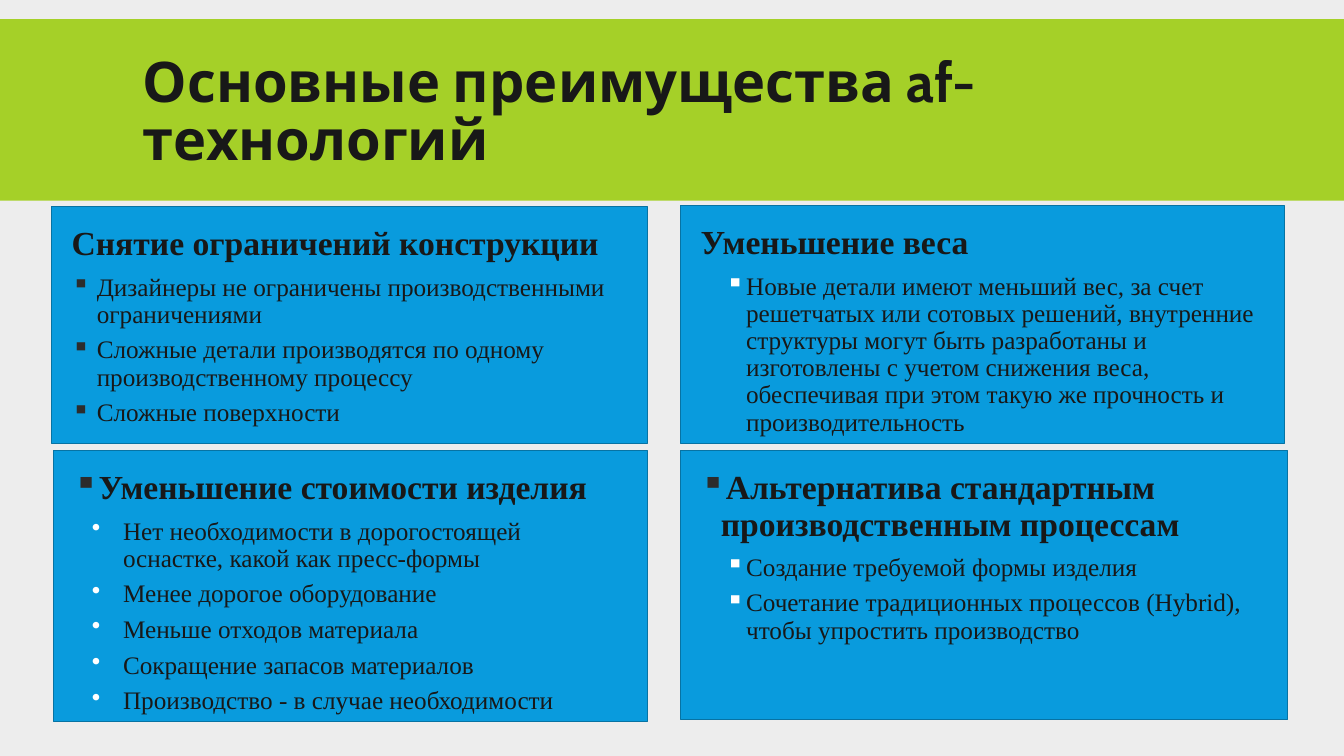
"""Build a slide with four panels on the main advantages of AF technologies."""
from dataclasses import dataclass

import lxml.etree
import pptx
import pptx.dml.color
import pptx.enum.shapes
import pptx.enum.text
import pptx.oxml.ns
import pptx.util

Inches = pptx.util.Inches
Pt = pptx.util.Pt
RGBColor = pptx.dml.color.RGBColor

BACKGROUND = RGBColor(0xED, 0xED, 0xED)
GREEN = RGBColor(0xA5, 0xD0, 0x28)
BLUE = RGBColor(0x09, 0x9B, 0xDD)
BLUE_EDGE = RGBColor(0x07, 0x73, 0xA3)
INK = RGBColor(0x18, 0x18, 0x18)
GREY = RGBColor(0x2C, 0x2C, 0x2C)
WHITE = RGBColor(0xFF, 0xFF, 0xFF)
PANEL_INSET = Inches(0.2)


@dataclass(frozen=True)
class Bullet:
    char: str
    color: RGBColor


@dataclass(frozen=True)
class Panel:
    left: float
    top: float
    width: float
    height: float
    heading: str
    heading_bullet: Bullet | None
    items: tuple[str, ...]
    item_bullet: Bullet
    margin: float
    hanging: float


GREY_SQUARE = Bullet("▪", GREY)
WHITE_SQUARE = Bullet("▪", WHITE)
WHITE_DOT = Bullet("•", WHITE)

PANELS = (
    Panel(0.51, 2.05, 5.91, 2.35, "Снятие ограничений конструкции", None, (
        "Дизайнеры не ограничены производственными ограничениями",
        "Сложные детали производятся по одному производственному процессу",
        "Сложные поверхности",
    ), GREY_SQUARE, 0.25, 0.25),
    Panel(6.75, 2.04, 5.99, 2.36, "Уменьшение веса", None, (
        "Новые детали имеют меньший вес, за счет решетчатых или сотовых решений, "
        "внутренние структуры могут быть разработаны и изготовлены с учетом "
        "снижения веса, обеспечивая при этом такую же прочность и "
        "производительность",
    ), WHITE_SQUARE, 0.45, 0.2),
    Panel(0.53, 4.47, 5.89, 2.69, "Уменьшение стоимости изделия", GREY_SQUARE, (
        "Нет необходимости в дорогостоящей оснастке, какой как пресс-формы",
        "Менее дорогое оборудование",
        "Меньше отходов материала",
        "Сокращение запасов материалов",
        "Производство - в случае необходимости",
    ), WHITE_DOT, 0.49, 0.31),
    Panel(6.75, 4.47, 6.02, 2.67,
          "Альтернатива стандартным производственным процессам", GREY_SQUARE, (
              "Создание требуемой формы изделия",
              "Сочетание традиционных процессов (Hybrid), чтобы упростить производство",
          ), WHITE_SQUARE, 0.45, 0.2),
)


def add_text(frame, text: str, *, size: float, font: str = "Times New Roman",
             bold: bool = False, line_spacing: float = 0.9, before: float = 0,
             after: float = 0, bullet: Bullet | None = None,
             margin: float = 0, hanging: float = 0) -> None:
    para = frame.paragraphs[0]
    if para.runs:
        para = frame.add_paragraph()
    para.alignment = pptx.enum.text.PP_ALIGN.LEFT
    para.line_spacing = line_spacing
    para.space_before = Pt(before)
    para.space_after = Pt(after)
    span = para.add_run()
    span.text = text
    span.font.size = Pt(size)
    span.font.name = font
    span.font.bold = bold
    span.font.color.rgb = INK
    properties = para._p.get_or_add_pPr()
    properties.set("marL", str(Inches(margin)))
    properties.set("indent", str(-Inches(hanging)))
    qn = pptx.oxml.ns.qn
    if bullet:
        color = lxml.etree.SubElement(properties, qn("a:buClr"))
        lxml.etree.SubElement(color, qn("a:srgbClr"), val=str(bullet.color))
        lxml.etree.SubElement(properties, qn("a:buChar"), char=bullet.char)
    else:
        lxml.etree.SubElement(properties, qn("a:buNone"))


def add_box(page, left: float, top: float, width: float, height: float,
            fill: RGBColor, edge: RGBColor | None = None):
    box = page.shapes.add_shape(
        pptx.enum.shapes.MSO_SHAPE.RECTANGLE,
        Inches(left), Inches(top), Inches(width), Inches(height))
    box.shadow.inherit = False
    box.fill.solid()
    box.fill.fore_color.rgb = fill
    if edge is None:
        box.line.fill.background()
    else:
        box.line.color.rgb = edge
        box.line.width = Pt(1)
    return box


def add_title(page) -> None:
    add_box(page, 0, 0.19, 13.33, 1.8, GREEN)
    title = page.shapes.add_textbox(
        Inches(1.32), Inches(0.31), Inches(10.7), Inches(1.65))
    frame = title.text_frame
    frame.word_wrap = True
    frame.vertical_anchor = pptx.enum.text.MSO_ANCHOR.MIDDLE
    add_text(frame, "Основные преимущества af-технологий", size=40,
             font="Cabin", bold=True, line_spacing=0.85)


def add_panel(page, panel: Panel) -> None:
    box = add_box(page, panel.left, panel.top, panel.width, panel.height,
                  BLUE, BLUE_EDGE)
    frame = box.text_frame
    frame.word_wrap = True
    frame.vertical_anchor = pptx.enum.text.MSO_ANCHOR.TOP
    frame.margin_left = frame.margin_right = PANEL_INSET
    frame.margin_top = frame.margin_bottom = PANEL_INSET
    add_text(frame, panel.heading, size=24, bold=True, before=12, after=6,
             bullet=panel.heading_bullet, margin=0.2, hanging=0.2)
    for item in panel.items:
        add_text(frame, item, size=18, before=2, after=4,
                 bullet=panel.item_bullet, margin=panel.margin,
                 hanging=panel.hanging)


def main() -> None:
    deck = pptx.Presentation()
    deck.slide_width = Inches(13.33)
    deck.slide_height = Inches(7.5)
    page = deck.slides.add_slide(deck.slide_layouts[6])
    page.background.fill.solid()
    page.background.fill.fore_color.rgb = BACKGROUND
    add_title(page)
    for panel in PANELS:
        add_panel(page, panel)
    deck.save("out.pptx")


if __name__ == "__main__":
    main()
